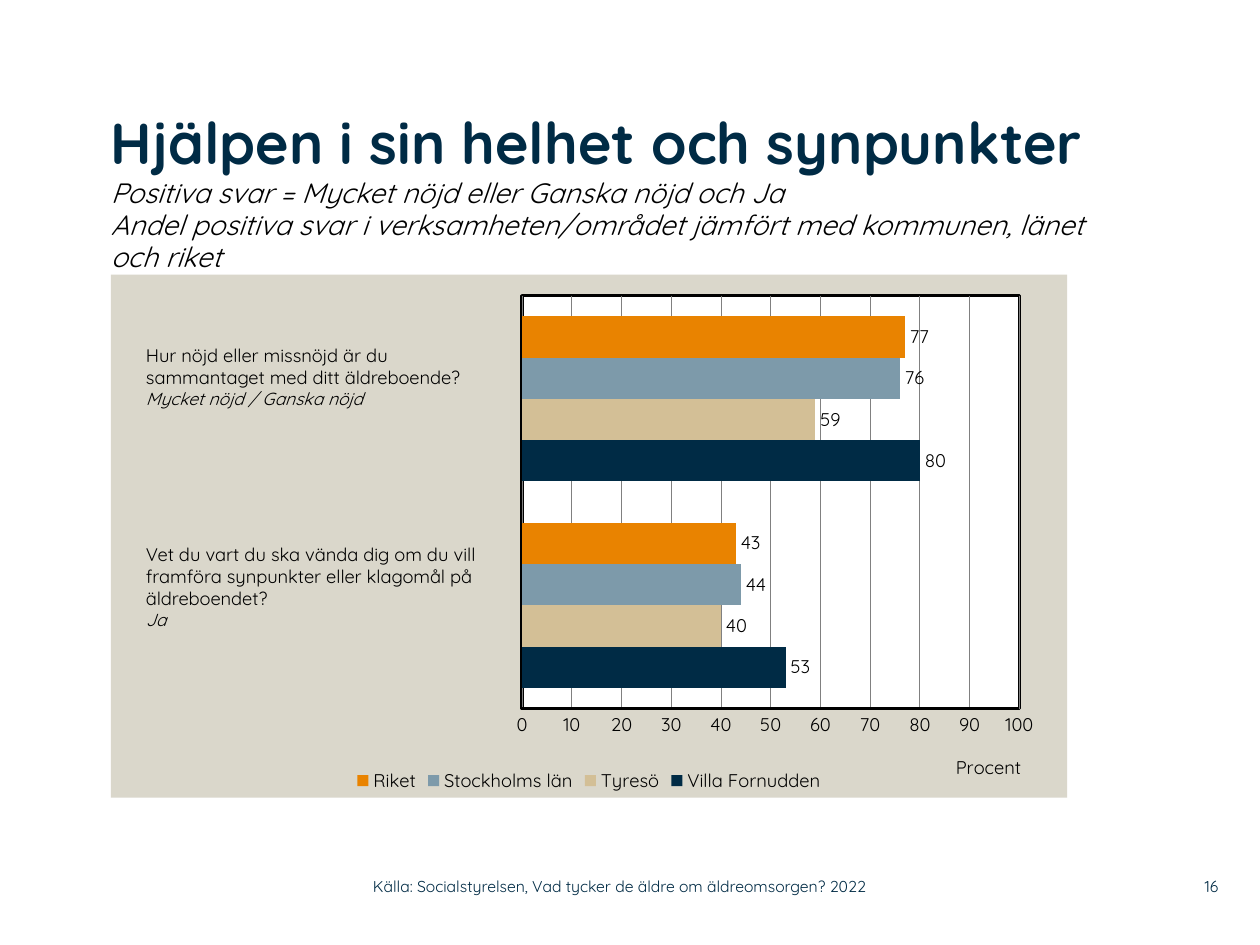
from lxml import etree
from pptx import Presentation
from pptx.chart.data import CategoryChartData
from pptx.dml.color import RGBColor
from pptx.enum.chart import XL_CHART_TYPE, XL_LABEL_POSITION, XL_LEGEND_POSITION, XL_TICK_MARK
from pptx.enum.text import MSO_ANCHOR, PP_ALIGN
from pptx.oxml import parse_xml
from pptx.oxml.ns import nsdecls, qn
from pptx.util import Inches, Pt

NAVY = RGBColor(0x00, 0x2B, 0x45)
SAND = RGBColor(0xD3, 0xBF, 0x96)
STEEL = RGBColor(0x7D, 0x9A, 0xAA)
ORANGE = RGBColor(0xE9, 0x83, 0x00)
STONE = RGBColor(0xDA, 0xD7, 0xCB)
GRAY = RGBColor(0x80, 0x80, 0x80)
BLACK = RGBColor(0x00, 0x00, 0x00)
WHITE = RGBColor(0xFF, 0xFF, 0xFF)

SERIES = [
    ("Villa Fornudden", (53, 80), NAVY),
    ("Tyresö", (40, 59), SAND),
    ("Stockholms län", (44, 76), STEEL),
    ("Riket", (43, 77), ORANGE),
]


class SurveySlide:
    """Holds the style and the current slide; places are percentages of the slide's size."""

    font = "Quicksand"

    def __init__(self, prs):
        self.width, self.height = prs.slide_width, prs.slide_height
        self.slide = prs.slides.add_slide(prs.slide_layouts[5])

    def box(self, x, y, w, h):
        return (int(self.width * x / 100), int(self.height * y / 100),
                int(self.width * w / 100), int(self.height * h / 100))

    def style(self, font, size, color=BLACK, bold=False, italic=False):
        font.name, font.size = self.font, Pt(size)
        font.bold, font.italic = bold, italic
        font.color.rgb = color

    def set_lines(self, tf, lines, align=PP_ALIGN.LEFT, spacing=None):
        tf.word_wrap = True
        for i, (text, look) in enumerate(lines):
            p = tf.paragraphs[0] if i == 0 else tf.add_paragraph()
            p.text = text
            p.alignment = align
            p.line_spacing = spacing
            if i:
                p.space_before = Pt(0)
            self.style(p.runs[0].font, **look)

    def trim(self, tf, anchor):
        tf.margin_left = tf.margin_right = tf.margin_top = tf.margin_bottom = 0
        tf.vertical_anchor = anchor

    def title(self, place, lines):
        sp = self.slide.shapes.title
        sp.left, sp.top, sp.width, sp.height = self.box(*place)
        self.trim(sp.text_frame, MSO_ANCHOR.BOTTOM)
        self.set_lines(sp.text_frame, lines, spacing=0.95)

    def text(self, place, lines):
        sp = self.slide.shapes.add_textbox(*self.box(*place))
        self.set_lines(sp.text_frame, lines)

    def footer(self, place, text, align=PP_ALIGN.LEFT):
        sp = self.slide.shapes.add_textbox(*self.box(*place))
        self.trim(sp.text_frame, MSO_ANCHOR.MIDDLE)
        self.set_lines(sp.text_frame, [(text, dict(size=9, color=NAVY))], align)

    def fill_area(self, parent, color, line=""):
        sp_pr = parse_xml(
            f'<c:spPr {nsdecls("c", "a")}><a:solidFill><a:srgbClr val="{color}"/></a:solidFill>'
            f'{line or "<a:ln><a:noFill/></a:ln>"}</c:spPr>')
        if parent.tag == qn("c:plotArea"):
            parent.append(sp_pr)
        else:
            parent.find(qn("c:chart")).addnext(sp_pr)

    def layout(self, parent, **parts):
        for old in parent.findall(qn("c:layout")):
            parent.remove(old)
        layout = etree.Element(qn("c:layout"))
        manual = etree.SubElement(layout, qn("c:manualLayout"))
        for tag, val in parts.items():
            etree.SubElement(manual, qn(f"c:{tag}")).set("val", str(val))
        text = parent.find(qn("c:tx"))
        if text is None:
            parent.insert(0, layout)
        else:
            text.addnext(layout)

    def chart(self, place, cats, series):
        data = CategoryChartData()
        data.categories = cats
        for name, vals, _ in series:
            data.add_series(name, vals)
        chart = self.slide.shapes.add_chart(
            XL_CHART_TYPE.BAR_CLUSTERED, *self.box(*place), data).chart
        self.style(chart.font, 10.5)
        chart.has_title = False
        chart.has_legend = True
        chart.legend.position = XL_LEGEND_POSITION.BOTTOM
        chart.legend.include_in_layout = False
        self.style(chart.legend.font, 10.5)

        plot = chart.plots[0]
        plot.gap_width, plot.overlap = 100, 0
        plot.vary_by_categories = False
        for ser, (_, _, color) in zip(plot.series, series):
            ser.format.fill.solid()
            ser.format.fill.fore_color.rgb = color
            labels = ser.data_labels
            labels.show_value = True
            labels.position = XL_LABEL_POSITION.OUTSIDE_END
            self.style(labels.font, 10.5)

        chart.category_axis.visible = False
        axis = chart.value_axis
        axis.minimum_scale, axis.maximum_scale, axis.major_unit = 0, 100, 10
        axis.major_tick_mark = axis.minor_tick_mark = XL_TICK_MARK.NONE
        axis.format.line.color.rgb, axis.format.line.width = BLACK, Pt(2)
        axis.major_gridlines.format.line.color.rgb = GRAY
        axis.major_gridlines.format.line.width = Pt(0.5)
        self.style(axis.tick_labels.font, 10.5)
        heading = axis.axis_title
        heading.text_frame.text = "Procent"
        self.style(heading.text_frame.paragraphs[0].runs[0].font, 10.5)
        space = chart.font._element.getroottree().getroot()
        self.layout(space.find(".//" + qn("c:valAx")).find(qn("c:title")),
                    xMode="edge", yMode="edge", x=0.88, y=0.91)
        area = space.find(".//" + qn("c:plotArea"))
        self.layout(area, layoutTarget="inner", xMode="edge", yMode="edge",
                    x=0.43, y=0.04, w=0.52, h=0.79)
        frame = (f'<a:ln w="{Pt(2)}"><a:solidFill><a:srgbClr val="{BLACK}"/>'
                 '</a:solidFill></a:ln>')
        self.fill_area(area, WHITE, frame)
        self.fill_area(space, STONE)


def main():
    prs = Presentation()
    prs.slide_width, prs.slide_height = Inches(10), Inches(7.5)
    s = SurveySlide(prs)
    subtitle = dict(size=16, italic=True)
    question = dict(size=10.5)
    answer = dict(size=10, italic=True)

    s.title((8.8, 11.07, 77.9, 17.87), [
        ("Hjälpen i sin helhet och synpunkter", dict(size=33, color=NAVY, bold=True)),
        ("Positiva svar = Mycket nöjd eller Ganska nöjd och Ja", subtitle),
        ("Andel positiva svar i verksamheten/området jämfört med kommunen, länet och riket",
         subtitle),
    ])
    s.chart((8.8, 29.07, 75.9, 55.33), ["1", "2"], SERIES)
    s.text((10.6, 35.73, 31, 10.8), [
        ("Hur nöjd eller missnöjd är du", question),
        ("sammantaget med ditt äldreboende?", question),
        ("Mycket nöjd / Ganska nöjd", answer),
    ])
    s.text((10.6, 56.8, 30.5, 10.8), [
        ("Vet du vart du ska vända dig om du vill framföra synpunkter eller "
         "klagomål på äldreboendet?", question),
        ("Ja", answer),
    ])
    s.footer((29.6, 91.87, 44.3, 3.87),
             "Källa: Socialstyrelsen, Vad tycker de äldre om äldreomsorgen? 2022")
    s.footer((92, 91.87, 4.7, 3.87), "16", PP_ALIGN.RIGHT)
    prs.save("out.pptx")


if __name__ == "__main__":
    main()
